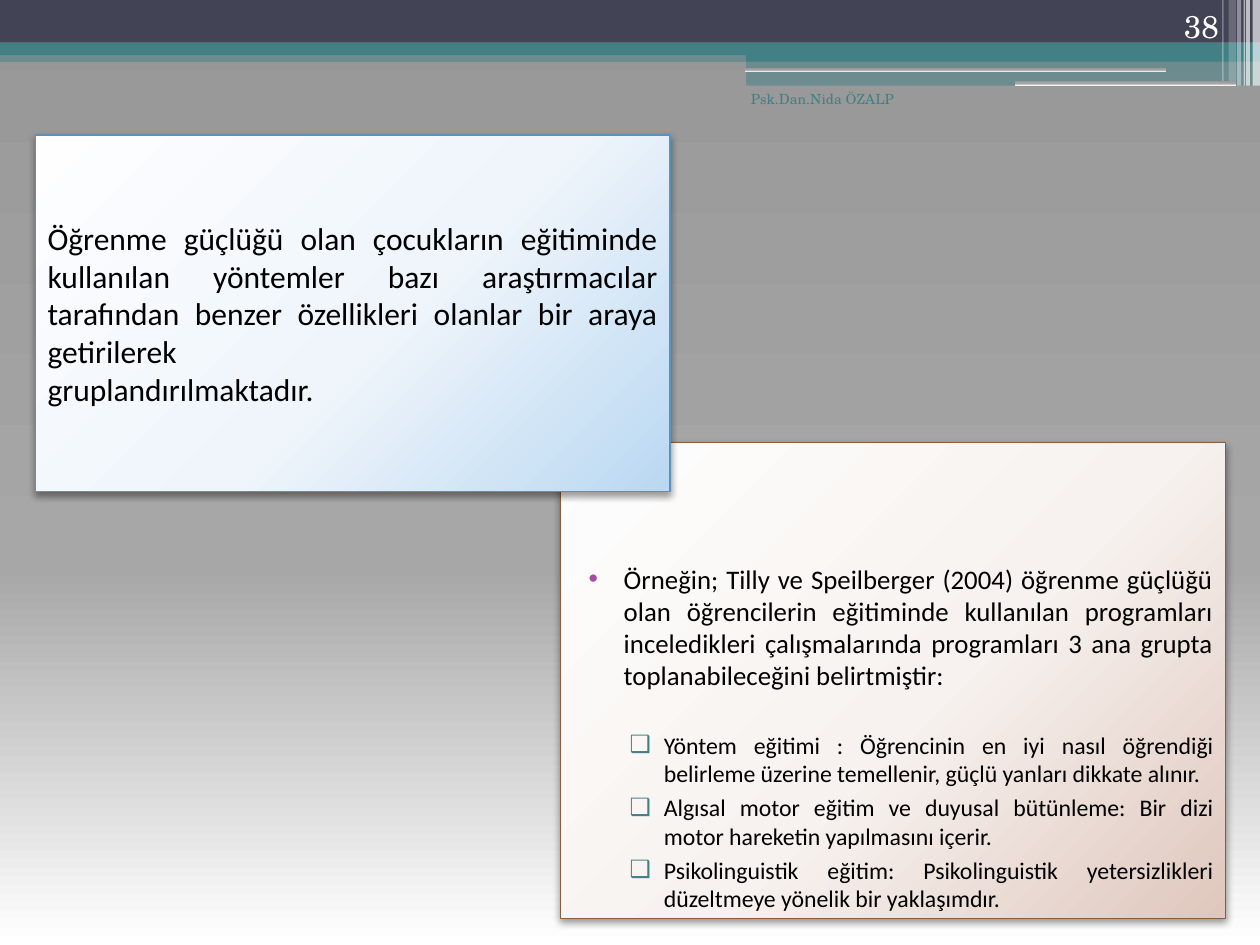
from lxml import etree
from pptx import Presentation, util as u
from pptx.dml.color import RGBColor
from pptx.enum import shapes, text
from pptx.oxml.ns import qn

BODY_FONT, FRAME_FONT = "Calibri", "TeX Gyre Schola"
TEAL, WHITE = "438086", "FFFFFF"
BACKDROP = [(0, "979797"), (60, "A7A7A7"), (100, WHITE)]
BLUE = [(0, "FEFEFF"), (55, "EFF5FB"), (100, "BAD8F2")]
BROWN = [(0, "FEFEFE"), (55, "F7F2EF"), (100, "DFC7BD")]

INTRO = [
    "Öğrenme güçlüğü olan çocukların eğitiminde kullanılan yöntemler bazı "
    "araştırmacılar tarafından benzer özellikleri olanlar bir araya getirilerek",
    "gruplandırılmaktadır.",
]
EXAMPLE = (
    "Örneğin; Tilly ve Speilberger (2004) öğrenme güçlüğü olan öğrencilerin "
    "eğitiminde kullanılan programları inceledikleri çalışmalarında programları "
    "3 ana grupta toplanabileceğini belirtmiştir:"
)
PROGRAMS = [
    "Yöntem eğitimi : Öğrencinin en iyi nasıl öğrendiği belirleme üzerine "
    "temellenir, güçlü yanları dikkate alınır.",
    "Algısal motor eğitim ve duyusal bütünleme: Bir dizi motor hareketin "
    "yapılmasını içerir.",
    "Psikolinguistik eğitim: Psikolinguistik yetersizlikleri düzeltmeye "
    "yönelik bir yaklaşımdır.",
]
BANDS = [
    ((0, 1.02, 25.4, 0.23), TEAL, 50),
    ((0, 0, 25.4, 0.86), "424456", 100),
    ((0, 0.86, 25.4, 0.25), TEAL, 100),
    ((15.04, 0.99, 10.36, 0.25), TEAL, 100),
    ((15.04, 1.22, 10.36, 0.51), TEAL, 50),
]
SLITS = [(15.01, 1.37, 8.51, 0.08), (20.47, 1.63, 4.45, 0.1)]
STRIPES = [
    (25.25, 0.15, 1.73, 65), (25.12, 0.08, 1.73, 65), (25.07, 0.03, 1.73, 60),
    (24.94, 0.08, 1.73, 40), (24.77, 0.15, 1.63, 20), (24.64, 0.03, 1.63, 30),
]
CAPTIONS = [
    ("38", (22.71, 0, 2.11, 1.02), 18, WHITE, text.MSO_ANCHOR.BOTTOM),
    ("Psk.Dan.Nida ÖZALP", (14.6, 1.7, 3.68, 1.27), 8, TEAL, text.MSO_ANCHOR.TOP),
]


def rgb(code):
    return RGBColor.from_string(code)


def cm(box):
    return [u.Cm(length) for length in box]


def add(parent, tag, **attributes):
    return etree.SubElement(parent, qn(tag), attributes)


def set_gradient(owner, fill, stops, angle):
    fill.gradient()
    fill.gradient_angle = angle
    stop_list = next(owner.iter(qn("a:gsLst")))
    for old in list(stop_list):
        stop_list.remove(old)
    for position, code in stops:
        stop = add(stop_list, "a:gs", pos=str(position * 1000))
        add(stop, "a:srgbClr", val=code)


def add_bar(slide, box, code, opacity=100, kind=shapes.MSO_SHAPE.RECTANGLE):
    bar = slide.shapes.add_shape(kind, *cm(box))
    bar.shadow.inherit = False
    bar.line.fill.background()
    bar.fill.solid()
    bar.fill.fore_color.rgb = rgb(code)
    if opacity < 100:
        color = next(bar._element.spPr.iter(qn("a:srgbClr")))
        add(color, "a:alpha", val=str(opacity * 1000))
    return bar


def style_card(card, stops, border, anchor):
    set_gradient(card._element, card.fill, stops, 315)
    card.line.color.rgb = rgb(border)
    card.line.width = u.Pt(0.75)
    card.shadow.inherit = False
    effects = card._element.spPr.find(qn("a:effectLst"))
    shadow = add(effects, "a:outerShdw", blurRad=str(u.Pt(4.1)), dist=str(u.Pt(2)),
                 dir="5400000", rotWithShape="0")
    add(add(shadow, "a:srgbClr", val="000000"), "a:alpha", val="40000")
    card.text_frame.word_wrap = True
    card.text_frame.auto_size = text.MSO_AUTO_SIZE.NONE
    card.text_frame.vertical_anchor = anchor


def style_font(paragraph, size, name, code, align):
    paragraph.alignment = align
    paragraph.font.size = u.Pt(size)
    paragraph.font.name = name
    paragraph.font.color.rgb = rgb(code)


def set_bullet(paragraph, mark, code, margin, indent):
    properties = paragraph._p.get_or_add_pPr()
    properties.set("marL", str(u.Cm(margin)))
    properties.set("indent", str(u.Cm(indent)))
    add(add(properties, "a:buClr"), "a:srgbClr", val=code)
    add(properties, "a:buChar", char=mark)


def fill_example(frame):
    frame.text = "\n".join([EXAMPLE, *PROGRAMS])
    for index, paragraph in enumerate(frame.paragraphs):
        paragraph.space_before = u.Pt(22.6 if index == 1 else 3)
        if index == 0:
            set_bullet(paragraph, "•", "A04DA3", 1.02, -0.71)
        else:
            paragraph.level = 1
            set_bullet(paragraph, "❑", TEAL, 1.83, -0.69)
        style_font(paragraph, 13.6 if index else 15.3, BODY_FONT, "000000",
                   text.PP_ALIGN.JUSTIFY)


def main():
    deck = Presentation()
    deck.slide_width, deck.slide_height = cm((25.4, 19.05))
    slide = deck.slides.add_slide(deck.slide_layouts[1])
    set_gradient(slide._element, slide.background.fill, BACKDROP, 270)
    title = slide.shapes.title._element
    title.getparent().remove(title)

    for box, code, opacity in BANDS:
        add_bar(slide, box, code, opacity)
    for box in SLITS:
        slit = add_bar(slide, box, WHITE, kind=shapes.MSO_SHAPE.ROUNDED_RECTANGLE)
        set_gradient(slit._element, slit.fill, BACKDROP, 270)
    for left, width, height, opacity in STRIPES:
        add_bar(slide, (left, 0, width, height), WHITE, opacity)

    example = slide.placeholders[1]
    example.left, example.top, example.width, example.height = cm((11.3, 8.92, 13.41, 9.6))
    style_card(example, BROWN, "8B5D3D", text.MSO_ANCHOR.BOTTOM)
    fill_example(example.text_frame)

    intro = slide.shapes.add_shape(shapes.MSO_SHAPE.RECTANGLE, *cm((0.71, 2.72, 12.8, 7.19)))
    style_card(intro, BLUE, "5C92B5", text.MSO_ANCHOR.MIDDLE)
    intro.text_frame.text = "\n".join(INTRO)
    for paragraph in intro.text_frame.paragraphs:
        style_font(paragraph, 18, BODY_FONT, "000000", text.PP_ALIGN.JUSTIFY)

    for words, box, size, code, anchor in CAPTIONS:
        caption = slide.shapes.add_textbox(*cm(box)).text_frame
        caption.word_wrap = True
        caption.vertical_anchor = anchor
        caption.text = words
        style_font(caption.paragraphs[0], size, FRAME_FONT, code, text.PP_ALIGN.RIGHT)

    deck.save("out.pptx")


if __name__ == "__main__":
    main()
